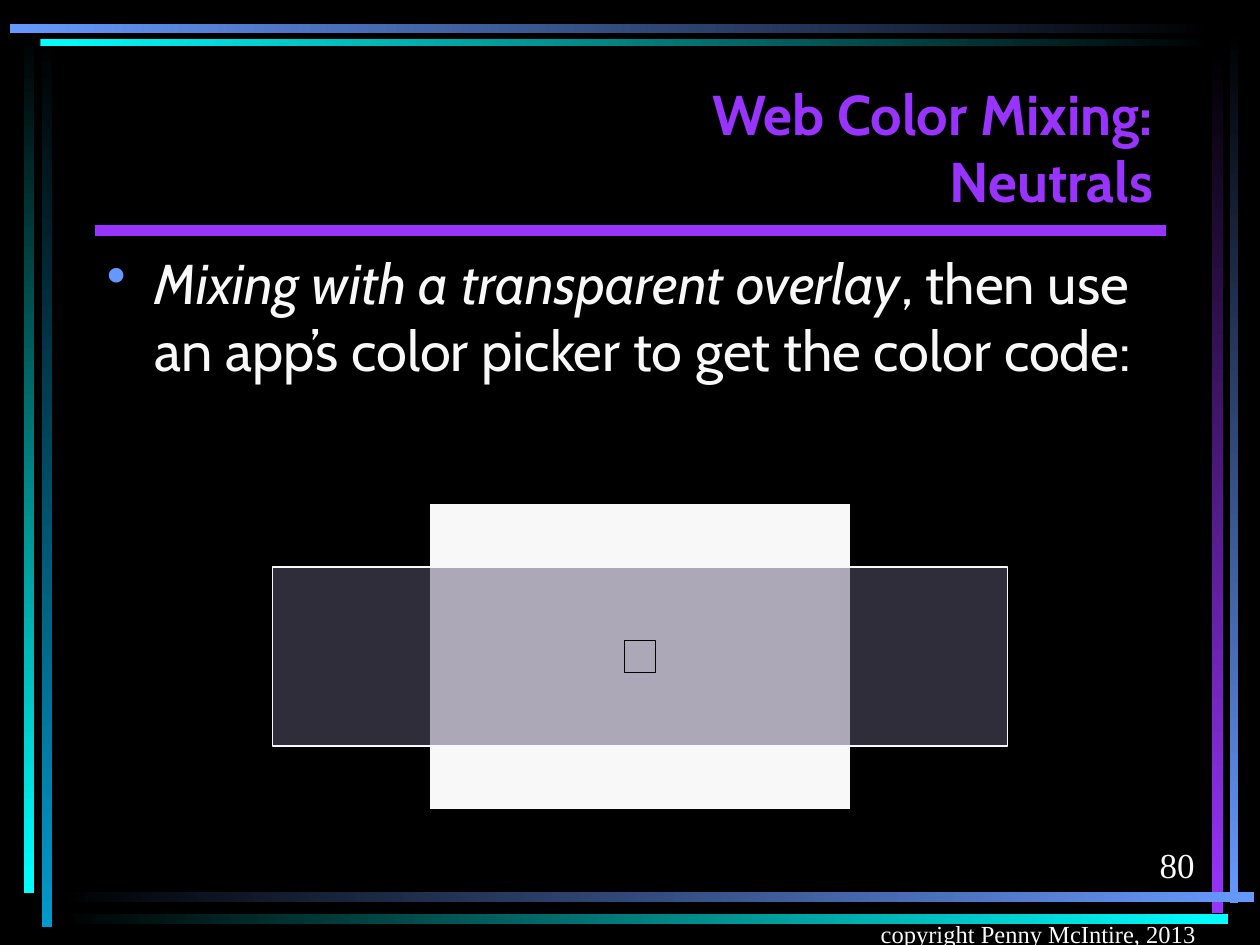
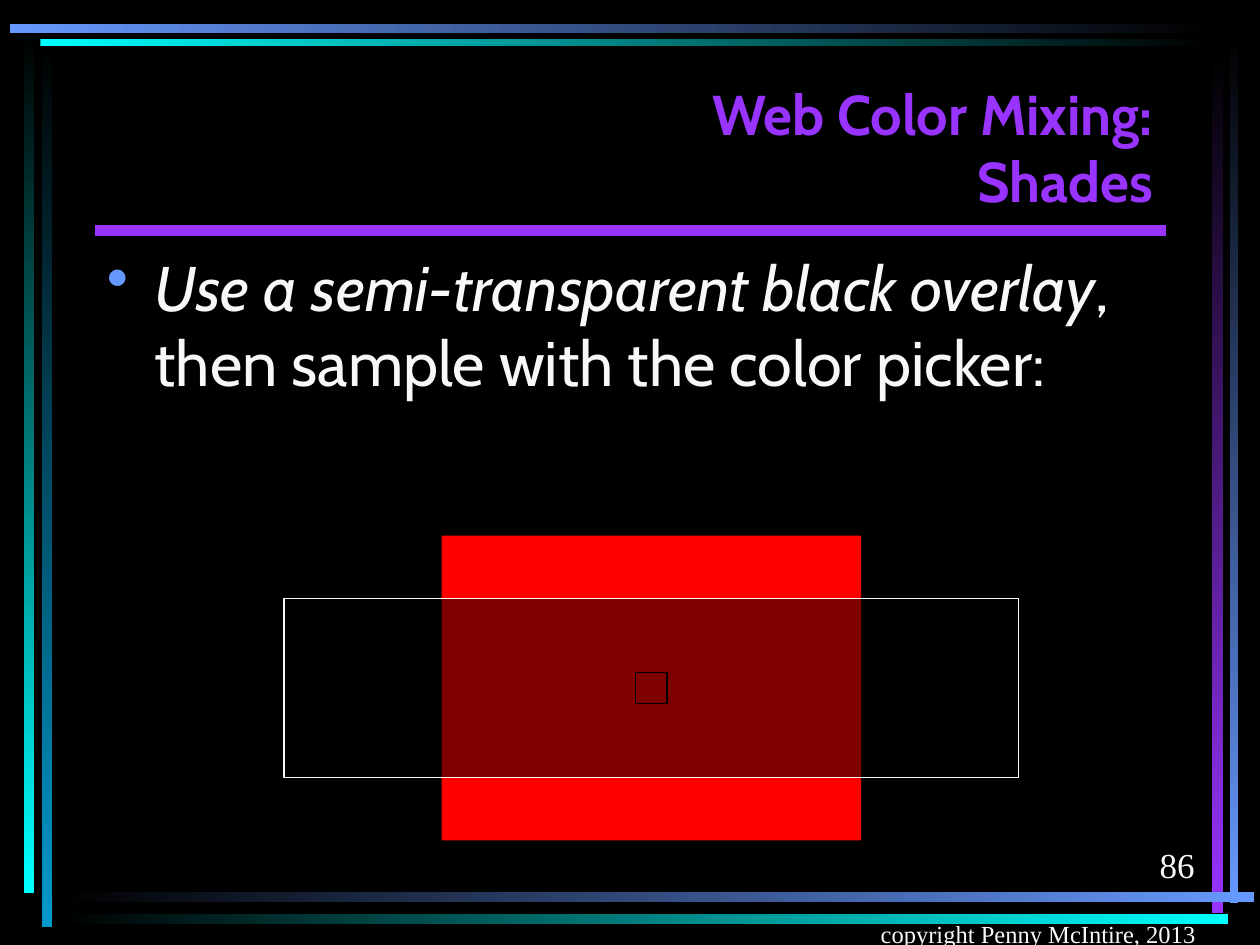
from copy import deepcopy
from dataclasses import dataclass

from lxml import etree
from pptx import Presentation
from pptx.dml.color import RGBColor
from pptx.enum.shapes import MSO_CONNECTOR, MSO_SHAPE
from pptx.enum.text import MSO_ANCHOR, MSO_AUTO_SIZE, PP_ALIGN
from pptx.oxml.ns import qn
from pptx.util import Inches, Pt

RECTANGLE = MSO_SHAPE.RECTANGLE
STRAIGHT = MSO_CONNECTOR.STRAIGHT
LEFT, RIGHT = PP_ALIGN.LEFT, PP_ALIGN.RIGHT
TOP, BOTTOM = MSO_ANCHOR.TOP, MSO_ANCHOR.BOTTOM
NO_AUTOFIT = MSO_AUTO_SIZE.NONE

BLACK, WHITE, RED = "000000", "F8F8F8", "FF0000"
PURPLE, BLUE, CYAN, TEAL, SLATE = "9933FF", "6699FF", "00FFFF", "0099CC", "615A77"
HEADING_FONT, FOOTER_FONT = "Cabin", "Times New Roman"
RIGHTWARD, DOWNWARD = 0, 270
LEFT_MARGIN, CONTENT_WIDTH = 0.75, 8.5
BULLET_INDENT = 0.38
COPYRIGHT = "copyright Penny McIntire, 2013"

PANEL_SIZE = (3.33, 2.42)
OVERLAY_SIZE = (5.83, 1.42)
SAMPLE_SIZE = (0.25, 0.25)


@dataclass(frozen=True)
class Bar:
    left: float
    top: float
    width: float
    height: float
    start: str
    end: str

    @property
    def angle(self) -> int:
        return RIGHTWARD if self.width > self.height else DOWNWARD


@dataclass(frozen=True)
class MixingSlide:
    topic: str
    emphasis: str
    remainder: str
    body_size: int
    body_height: float
    number: int
    center: tuple[float, float]
    panel_color: str
    overlay_color: str


FRAME_BARS = (
    Bar(0.33, 0.28, 0.08, 7.08, BLACK, TEAL),
    Bar(0.19, 0.25, 0.08, 6.84, BLACK, CYAN),
    Bar(9.76, 0.24, 0.07, 6.93, BLACK, BLUE),
    Bar(9.62, 0.42, 0.09, 6.83, BLACK, PURPLE),
    Bar(0.45, 7.08, 9.5, 0.08, BLACK, BLUE),
    Bar(0.45, 7.25, 9.3, 0.08, BLACK, CYAN),
    Bar(0.32, 0.31, 9.32, 0.06, CYAN, BLACK),
    Bar(0.08, 0.19, 9.56, 0.07, BLUE, BLACK),
)

MIXING_SLIDES = (
    MixingSlide(
        "Neutrals", "Mixing with a transparent overlay",
        ", then use an app’s color picker to get the color code:",
        32, 2.25, 80, (5.08, 5.21), WHITE, SLATE,
    ),
    MixingSlide(
        "Shades", "Use a semi-transparent black overlay",
        ", then sample with the color picker:",
        36, 5.17, 86, (5.17, 5.46), RED, BLACK,
    ),
)


def color(value: str) -> RGBColor:
    return RGBColor.from_string(value)


def write(paragraph, text: str, *, size: float, font: str, fill: str,
          bold: bool = False, italic: bool = False, align=LEFT) -> None:
    """Append formatted text, turning each newline into a line break."""
    paragraph.alignment = align
    for index, line in enumerate(text.split("\n")):
        if index:
            paragraph.add_line_break()
            line_break = paragraph._p[-1]
            line_break.append(deepcopy(paragraph.runs[-1]._r.rPr))
        run = paragraph.add_run()
        run.text = line
        run.font.size = Pt(size)
        run.font.name = font
        run.font.bold = bold
        run.font.italic = italic
        run.font.color.rgb = color(fill)


def prepare_frame(shape, anchor):
    """Set up the text frame and return its first paragraph."""
    frame = shape.text_frame
    frame.word_wrap = True
    frame.auto_size = NO_AUTOFIT
    frame.vertical_anchor = anchor
    return frame.paragraphs[0]


def add_text_box(slide, left: float, top: float, width: float, height: float,
                 anchor=TOP):
    box = slide.shapes.add_textbox(
        Inches(left), Inches(top), Inches(width), Inches(height))
    return prepare_frame(box, anchor)


def add_bullet(paragraph, fill: str) -> None:
    properties = paragraph._p.get_or_add_pPr()
    properties.set("marL", str(Inches(BULLET_INDENT)))
    properties.set("indent", str(-Inches(BULLET_INDENT)))
    bullet_color = etree.SubElement(properties, qn("a:buClr"))
    etree.SubElement(bullet_color, qn("a:srgbClr"), val=fill)
    etree.SubElement(properties, qn("a:buChar"), char="•")


def add_rectangle(slide, left: float, top: float, width: float, height: float):
    shape = slide.shapes.add_shape(
        RECTANGLE, Inches(left), Inches(top), Inches(width), Inches(height))
    shape.shadow.inherit = False
    shape.fill.background()
    shape.line.fill.background()
    return shape


def add_centered_rectangle(slide, center: tuple[float, float],
                           size: tuple[float, float], *, fill: str | None = None,
                           opacity: int = 100, outline: str | None = None) -> None:
    (x, y), (width, height) = center, size
    shape = add_rectangle(slide, x - width / 2, y - height / 2, width, height)
    if fill:
        shape.fill.solid()
        shape.fill.fore_color.rgb = color(fill)
        if opacity < 100:
            solid_color = shape._element.spPr.find(qn("a:solidFill"))[0]
            etree.SubElement(solid_color, qn("a:alpha"), val=str(opacity * 1000))
    if outline:
        shape.line.color.rgb = color(outline)
        shape.line.width = Pt(0.75)


def add_frame_bar(slide, bar: Bar) -> None:
    shape = add_rectangle(slide, bar.left, bar.top, bar.width, bar.height)
    shape.fill.gradient()
    shape.fill.gradient_angle = bar.angle
    for stop, value in zip(shape.fill.gradient_stops, (bar.start, bar.end)):
        stop.color.rgb = color(value)


def add_title_rule(slide) -> None:
    y = Inches(1.83)
    rule = slide.shapes.add_connector(
        STRAIGHT, Inches(LEFT_MARGIN), y, Inches(LEFT_MARGIN + CONTENT_WIDTH), y)
    rule.line.color.rgb = color(PURPLE)
    rule.line.width = Pt(6)
    etree.SubElement(rule._element.spPr, qn("a:effectLst"))


def add_title(slide, text: str) -> None:
    title = slide.shapes.title
    title.left, title.top = Inches(LEFT_MARGIN), Inches(0.5)
    title.width, title.height = Inches(CONTENT_WIDTH), Inches(1.25)
    write(prepare_frame(title, BOTTOM), text, size=32, font=HEADING_FONT,
          fill=PURPLE, bold=True, align=RIGHT)


def add_footer(slide, number: int) -> None:
    number_paragraph = add_text_box(slide, 7.5, 6.58, 2.08, 0.5, BOTTOM)
    copyright_paragraph = add_text_box(slide, 6.42, 7.08, 3.17, 0.5, BOTTOM)
    write(number_paragraph, str(number), size=20, font=FOOTER_FONT,
          fill=WHITE, align=RIGHT)
    write(copyright_paragraph, COPYRIGHT, size=14, font=FOOTER_FONT,
          fill=WHITE, align=RIGHT)


def add_body(slide, content: MixingSlide) -> None:
    paragraph = add_text_box(
        slide, LEFT_MARGIN, 1.92, CONTENT_WIDTH, content.body_height)
    add_bullet(paragraph, BLUE)
    for text, italic in ((content.emphasis, True), (content.remainder, False)):
        write(paragraph, text, size=content.body_size, font=HEADING_FONT,
              fill=WHITE, italic=italic)


def add_overlay_demo(slide, content: MixingSlide) -> None:
    """Draw the base colour, the half-transparent overlay and the sample spot."""
    add_centered_rectangle(slide, content.center, PANEL_SIZE,
                           fill=content.panel_color)
    add_centered_rectangle(slide, content.center, OVERLAY_SIZE,
                           fill=content.overlay_color, opacity=50, outline=WHITE)
    add_centered_rectangle(slide, content.center, SAMPLE_SIZE, outline=BLACK)


def add_mixing_slide(presentation, content: MixingSlide) -> None:
    slide = presentation.slides.add_slide(presentation.slide_layouts[5])
    for bar in FRAME_BARS:
        add_frame_bar(slide, bar)
    add_title_rule(slide)
    add_title(slide, f"Web Color Mixing:\n{content.topic}")
    add_footer(slide, content.number)
    add_body(slide, content)
    add_overlay_demo(slide, content)


def main() -> None:
    presentation = Presentation()
    presentation.slide_width = Inches(10)
    presentation.slide_height = Inches(7.5)
    background = presentation.slide_master.background.fill
    background.solid()
    background.fore_color.rgb = color(BLACK)
    for content in MIXING_SLIDES:
        add_mixing_slide(presentation, content)
    presentation.save("out.pptx")


if __name__ == "__main__":
    main()
